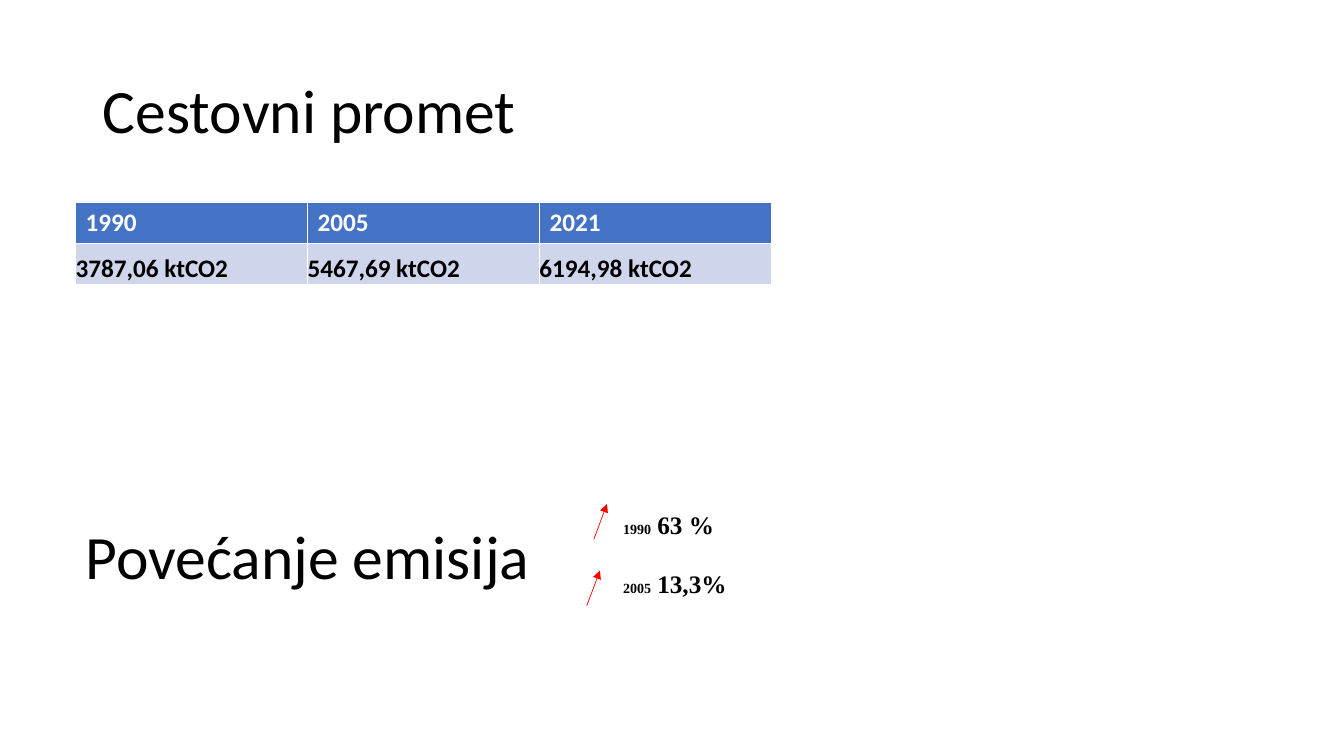
from lxml.etree import SubElement
from pptx import Presentation
from pptx.dml.color import RGBColor
from pptx.enum.shapes import MSO_CONNECTOR
from pptx.enum.text import MSO_ANCHOR, PP_ALIGN
from pptx.oxml.ns import qn
from pptx.util import Inches, Pt

TITLE = "Cestovni promet"
SUBTITLE = "Povećanje emisija"
EMISSIONS = [
    ("1990", "2005", "2021"),
    ("3787,06 ktCO2", "5467,69 ktCO2", "6194,98 ktCO2"),
]
INCREASES = [("1990", " 63 %"), ("2005", " 13,3%")]
ARROW_STARTS = [(5.89, 5.35), (5.82, 6.01)]
ARROW_RUN, ARROW_RISE = 0.13, 0.35
COLORS = {
    "text": "000000",
    "header": "4472C4",
    "header_text": "FFFFFF",
    "body": "CFD5EA",
    "arrow": "FF0000",
}


def color(name):
    return RGBColor.from_string(COLORS[name])


def style_span(span, size, font="Calibri", bold=False, ink="text"):
    span.font.size = Pt(size)
    span.font.name = font
    span.font.bold = bold
    span.font.color.rgb = color(ink)


def write_heading(box, text):
    frame = box.text_frame
    frame.text = text
    frame.word_wrap = True
    frame.vertical_anchor = MSO_ANCHOR.MIDDLE
    para = frame.paragraphs[0]
    para.alignment = PP_ALIGN.LEFT
    para.line_spacing = 0.9
    style_span(para.runs[0], 44)


def add_emissions_table(page):
    box = page.shapes.add_table(
        len(EMISSIONS), len(EMISSIONS[0]),
        Inches(0.75), Inches(2.01), Inches(6.9), Inches(0.81))
    for row_index, row in enumerate(EMISSIONS):
        for column_index, value in enumerate(row):
            cell = box.table.cell(row_index, column_index)
            header = row_index == 0
            cell.text = value
            cell.fill.solid()
            cell.fill.fore_color.rgb = color("header" if header else "body")
            style_span(cell.text_frame.paragraphs[0].runs[0], 18, bold=True,
                       ink="header_text" if header else "text")
            if not header:
                cell.vertical_anchor = MSO_ANCHOR.BOTTOM
                cell.margin_left = cell.margin_right = 0
                cell.margin_top = cell.margin_bottom = 0


def add_arrow(page, left, bottom):
    arrow = page.shapes.add_connector(
        MSO_CONNECTOR.STRAIGHT, Inches(left), Inches(bottom),
        Inches(left + ARROW_RUN), Inches(bottom - ARROW_RISE))
    arrow.line.color.rgb = color("arrow")
    arrow.line.width = Pt(0.5)
    SubElement(arrow.line._get_or_add_ln(), qn("a:tailEnd"), type="triangle")
    SubElement(arrow._element.spPr, qn("a:effectLst"))


def add_increases(page):
    box = page.shapes.add_textbox(
        Inches(6.02), Inches(5), Inches(3.39), Inches(1.01))
    frame = box.text_frame
    frame.word_wrap = True
    frame.margin_left = Inches(0.16)
    for index, (year, change) in enumerate(INCREASES):
        para = frame.add_paragraph() if index else frame.paragraphs[0]
        para.space_before = Pt(21 * index)
        for text, size in ((year, 10), (change, 18)):
            span = para.add_run()
            span.text = text
            style_span(span, size, "Times New Roman", bold=True)


def main():
    deck = Presentation()
    deck.slide_width, deck.slide_height = Inches(13.33), Inches(7.5)
    page = deck.slides.add_slide(deck.slide_layouts[5])

    title = page.shapes.title
    title.left, title.top = Inches(0.92), Inches(0.4)
    title.width, title.height = Inches(11.5), Inches(1.45)
    write_heading(title, TITLE)

    add_emissions_table(page)
    for left, bottom in ARROW_STARTS:
        add_arrow(page, left, bottom)

    subtitle = page.shapes.add_textbox(
        Inches(0.75), Inches(4.78), Inches(6.69), Inches(2.21))
    write_heading(subtitle, SUBTITLE)
    subtitle.text_frame.margin_bottom = Inches(0.71)

    add_increases(page)
    deck.save("out.pptx")


if __name__ == "__main__":
    main()
